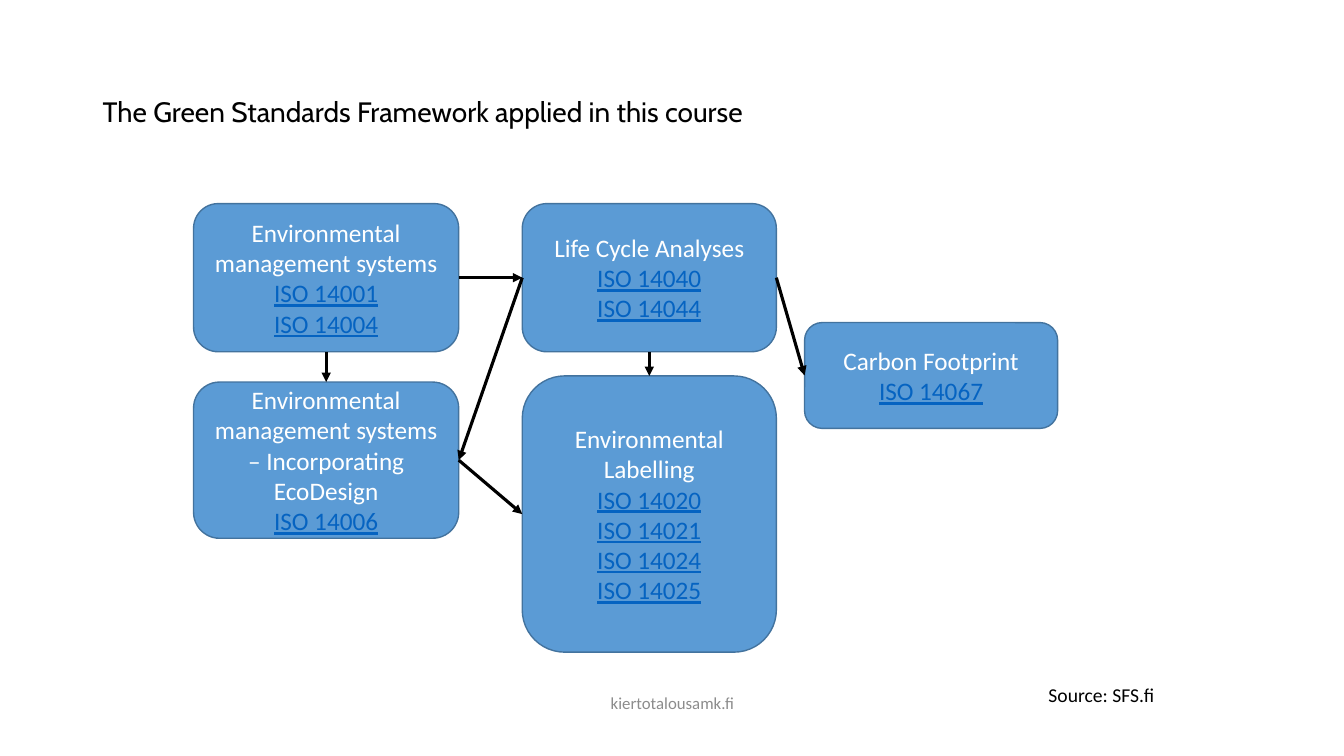
from lxml import etree
from pptx import Presentation
from pptx.dml.color import RGBColor
from pptx.enum.shapes import MSO_CONNECTOR, MSO_SHAPE
from pptx.enum.text import MSO_ANCHOR, PP_ALIGN
from pptx.oxml.ns import qn
from pptx.util import Inches, Pt

COLORS = {
    "black": "000000",
    "white": "FFFFFF",
    "footer": "8C8C8C",
    "box": "5B9BD5",
    "outline": "43739E",
    "standard": "0563C1",
}
TOP, LEFT, BOTTOM, RIGHT = range(4)  # connection sites of a rounded rectangle


def style(font, size, color, name="Calibri"):
    font.name = name
    font.size = Pt(size)
    font.color.rgb = RGBColor.from_string(COLORS[color])


def add_label(place, text, size, color, anchor, align, name="Calibri"):
    frame = slide.shapes.add_textbox(*map(Inches, place)).text_frame
    frame.word_wrap = True
    frame.vertical_anchor = anchor
    frame.text = text
    paragraph = frame.paragraphs[0]
    paragraph.alignment = align
    style(paragraph.runs[0].font, size, color, name)
    return paragraph


prs = Presentation()
prs.slide_width = Inches(13.33)
prs.slide_height = Inches(7.5)
slide = prs.slides.add_slide(prs.slide_layouts[6])

title = add_label((0.92, 0.4, 11.5, 1.45),
                  "The Green Standards Framework applied in this course",
                  20, "black", MSO_ANCHOR.MIDDLE, PP_ALIGN.LEFT, "Cabin")
title.line_spacing = 0.9
add_label((4.42, 6.77, 4.5, 0.4), "kiertotalousamk.fi",
          12, "footer", MSO_ANCHOR.MIDDLE, PP_ALIGN.CENTER)

# key: (place, topic, ISO standard numbers)
topics = {
    "management": ((1.92, 2.02, 2.63, 1.47),
                   "Environmental management systems", [14001, 14004]),
    "footprint": ((7.98, 3.2, 2.51, 1.05), "Carbon Footprint", [14067]),
    "life cycle": ((5.18, 2.02, 2.52, 1.47),
                   "Life Cycle Analyses", [14040, 14044]),
    "labelling": ((5.18, 3.73, 2.52, 2.74), "Environmental Labelling",
                  [14020, 14021, 14024, 14025]),
    "ecodesign": ((1.92, 3.79, 2.63, 1.55),
                  "Environmental management systems – Incorporating EcoDesign",
                  [14006]),
}
boxes = {}
for key, (place, topic, standards) in topics.items():
    box = slide.shapes.add_shape(MSO_SHAPE.ROUNDED_RECTANGLE, *map(Inches, place))
    box.shadow.inherit = False
    box.fill.solid()
    box.fill.fore_color.rgb = RGBColor.from_string(COLORS["box"])
    box.line.color.rgb = RGBColor.from_string(COLORS["outline"])
    box.line.width = Pt(1)
    frame = box.text_frame
    frame.word_wrap = True
    frame.vertical_anchor = MSO_ANCHOR.MIDDLE
    frame.text = "\n".join([topic] + [f"ISO {number}" for number in standards])
    for index, paragraph in enumerate(frame.paragraphs):
        paragraph.alignment = PP_ALIGN.CENTER
        font = paragraph.runs[0].font
        style(font, 18, "standard" if index else "white")
        font.underline = index > 0
    boxes[key] = box

arrows = [
    ("life cycle", RIGHT, "footprint", LEFT),
    ("life cycle", BOTTOM, "labelling", TOP),
    ("management", BOTTOM, "ecodesign", TOP),
    ("life cycle", LEFT, "ecodesign", RIGHT),
    ("ecodesign", RIGHT, "labelling", LEFT),
    ("management", RIGHT, "life cycle", LEFT),
]
for source, source_side, target, target_side in arrows:
    arrow = slide.shapes.add_connector(MSO_CONNECTOR.STRAIGHT, 0, 0, 0, 0)
    arrow.begin_connect(boxes[source], source_side)
    arrow.end_connect(boxes[target], target_side)
    arrow.line.color.rgb = RGBColor.from_string(COLORS["black"])
    arrow.line.width = Pt(2.25)
    outline = arrow.line._get_or_add_ln()
    etree.SubElement(outline, qn("a:tailEnd"), type="triangle")
    etree.SubElement(arrow._element.spPr, qn("a:effectLst"))

add_label((10.3, 6.73, 2.88, 0.34), "Source: SFS.fi",
          14, "black", MSO_ANCHOR.TOP, PP_ALIGN.LEFT)

prs.save("out.pptx")
